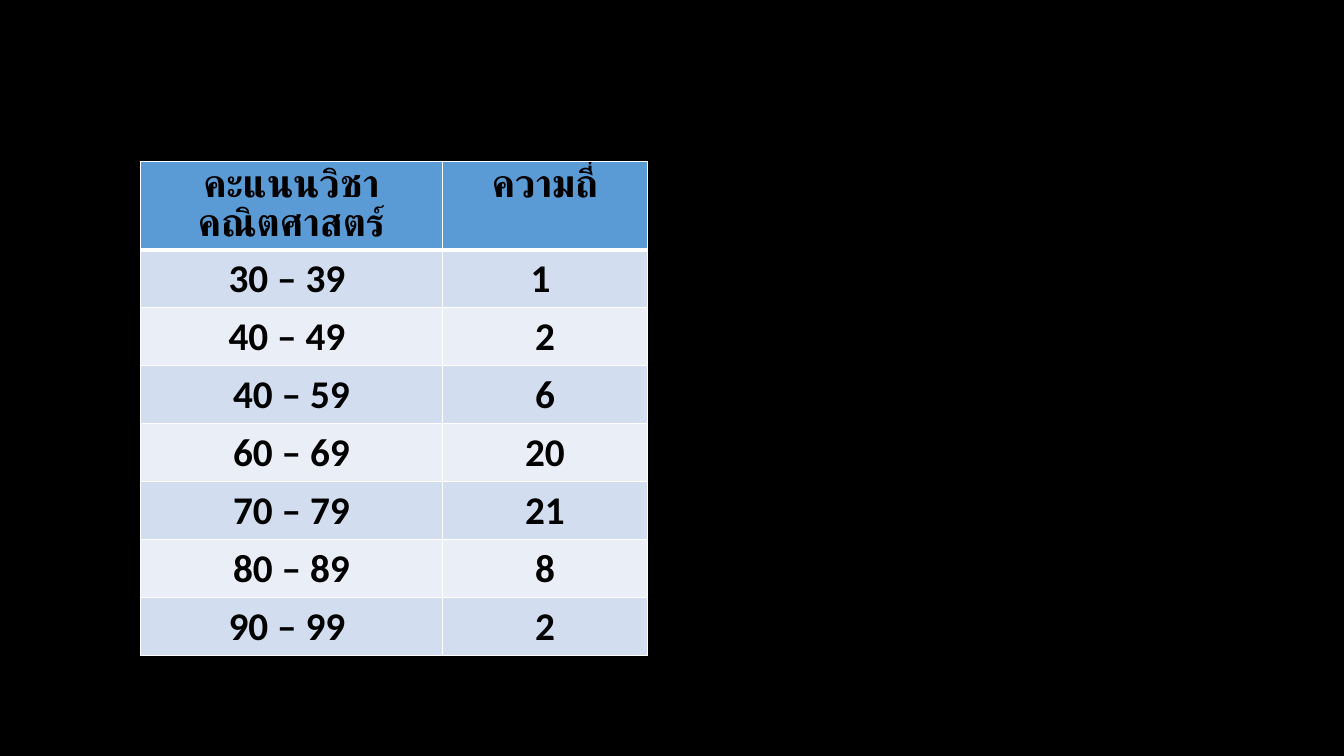
"""Build a slide with a frequency table of mathematics scores."""
from dataclasses import dataclass

from lxml.etree import SubElement
from pptx import Presentation
from pptx.dml.color import RGBColor as Color
from pptx.enum.text import PP_ALIGN as Align
from pptx.oxml.ns import qn
from pptx.util import Inches, Pt


@dataclass(frozen=True)
class Theme:
    background: str = "000000"
    text: str = "000000"
    header: str = "5B9BD5"
    bands: tuple = ("D2DEEF", "EAEFF7")
    border: str = "FFFFFF"
    font: str = "Calibri"
    size: int = 28
    thin: int = 1
    thick: int = 3


def add_border(cell, side, width):
    line = SubElement(cell._tc.get_or_add_tcPr(), qn(f"a:ln{side}"), w=str(Pt(width)))
    fill = SubElement(line, qn("a:solidFill"))
    SubElement(fill, qn("a:srgbClr"), val=theme.border)


theme = Theme()
score_rows = [
    ("คะแนนวิชาคณิตศาสตร์", "ความถี่"),
    ("30 – 39 ", "1 "),
    ("40 – 49 ", "2"),
    ("40 – 59", "6"),
    ("60 – 69", "20"),
    ("70 – 79", "21"),
    ("80 – 89", "8"),
    ("90 – 99 ", "2"),
]
column_widths = (3, 2.03)
row_height = 0.54

presentation = Presentation()
presentation.slide_width = Inches(13.33)
presentation.slide_height = Inches(7.5)
slide = presentation.slides.add_slide(presentation.slide_layouts[6])
slide.background.fill.solid()
slide.background.fill.fore_color.rgb = Color.from_string(theme.background)

table = slide.shapes.add_table(
    len(score_rows), len(column_widths), Inches(1.39), Inches(1.6),
    Inches(sum(column_widths)), Inches(row_height * len(score_rows)),
).table
for column, width in zip(table.columns, column_widths):
    column.width = Inches(width)

for row_index, texts in enumerate(score_rows):
    table.rows[row_index].height = Inches(row_height)
    is_header = row_index == 0
    fill_color = theme.header if is_header else theme.bands[(row_index - 1) % 2]
    for column_index, text in enumerate(texts):
        cell = table.cell(row_index, column_index)
        for side in "LRTB":
            under_header = (row_index, side) in ((0, "B"), (1, "T"))
            add_border(cell, side, theme.thick if under_header else theme.thin)
        cell.fill.solid()
        cell.fill.fore_color.rgb = Color.from_string(fill_color)
        paragraph = cell.text_frame.paragraphs[0]
        paragraph.alignment = Align.CENTER
        run = paragraph.add_run()
        run.text = text
        run.font.name = theme.font
        run.font.size = Pt(theme.size)
        run.font.bold = True
        run.font.color.rgb = Color.from_string(theme.text)

presentation.save("out.pptx")
